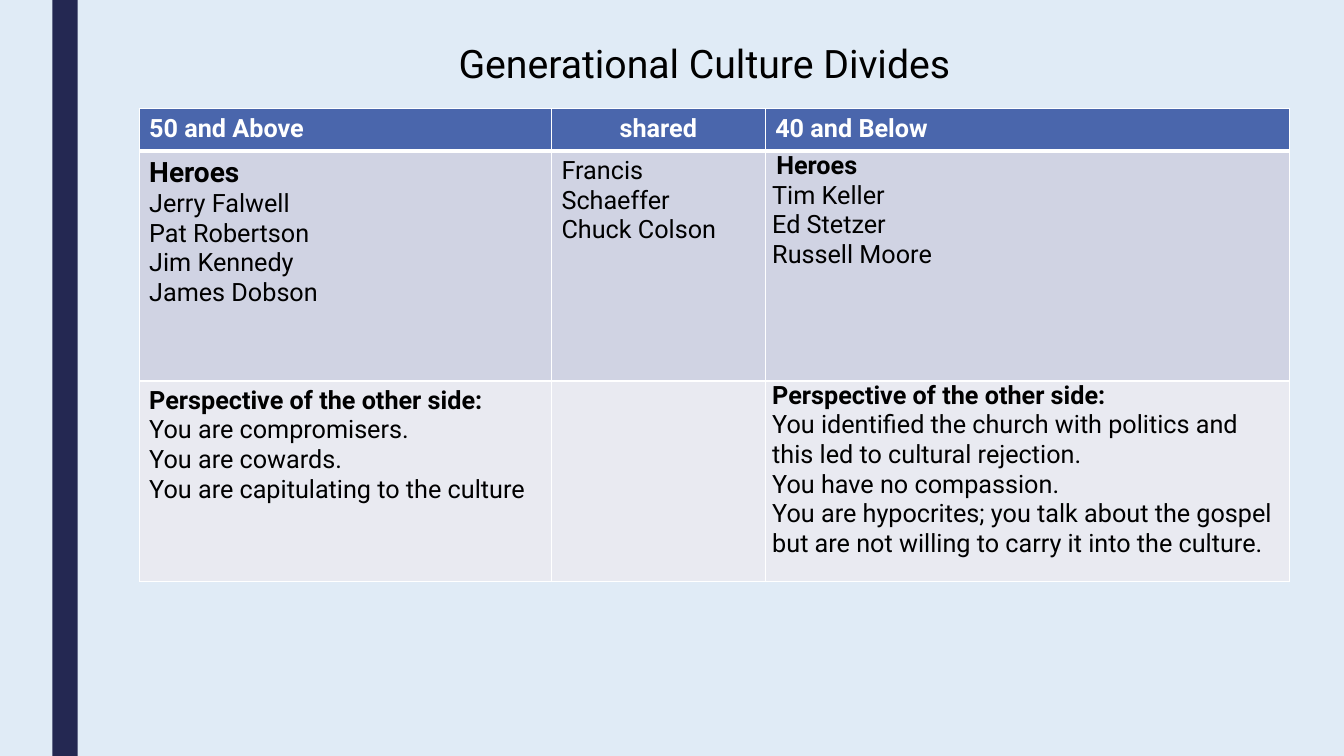
from lxml.etree import SubElement
from pptx import Presentation
from pptx.dml.color import RGBColor
from pptx.enum.shapes import MSO_SHAPE
from pptx.enum.text import MSO_ANCHOR, PP_ALIGN
from pptx.oxml.ns import qn
from pptx.util import Inches, Pt

FONT = "Roboto"
TITLE = "Generational Culture Divides"
ROWS = [
    [["50 and Above"], ["shared"], ["40 and Below"]],
    [
        ["Heroes", "Jerry Falwell", "Pat Robertson", "Jim Kennedy", "James Dobson"],
        ["Francis Schaeffer", "Chuck Colson"],
        ["Heroes", "Tim Keller", "Ed Stetzer", "Russell Moore"],
    ],
    [
        [
            "Perspective of the other side:",
            "You are compromisers.",
            "You are cowards.",
            "You are capitulating to the culture",
        ],
        [],
        [
            "Perspective of the other side:",
            "You identified the church with politics and this led to cultural rejection.",
            "You have no compassion.",
            "You are hypocrites; you talk about the gospel but are not willing "
            "to carry it into the culture.",
        ],
    ],
]
HEADINGS = {"Heroes", "Perspective of the other side:"}
COLUMN_WIDTHS = [4.09, 2.12, 5.2]
ROW_HEIGHTS = [0.42, 2.28, 1.99]
ROW_FILLS = ["4A66AC", "D0D3E3", "E9EAF1"]


def color(value):
    return RGBColor.from_string(value)


def paint(fill, value):
    fill.solid()
    fill.fore_color.rgb = color(value)


def style(font, size, value, bold=False):
    font.name = FONT
    font.size = Pt(size)
    font.bold = bold
    font.color.rgb = color(value)


def add_borders(cell, widths):
    properties = cell._tc.get_or_add_tcPr()
    for side, width in widths.items():
        line = SubElement(properties, qn(f"a:ln{side}"), w=str(Pt(width)))
        SubElement(SubElement(line, qn("a:solidFill")), qn("a:srgbClr"), val="FFFFFF")


def fill_cell(cell, lines, row, column):
    top = 3 if row == 1 else 1
    bottom = 3 if row == 0 else 1
    add_borders(cell, {"L": 1, "R": 1, "T": top, "B": bottom})
    paint(cell.fill, ROW_FILLS[row])
    if row > 0 and column == 2:
        cell.margin_left = cell.margin_right = Inches(0.07)
        cell.margin_top = cell.margin_bottom = 0
    cell.text_frame.text = "\n".join(lines)
    for para, line in zip(cell.text_frame.paragraphs, lines):
        if row == 0 and column == 1:
            para.alignment = PP_ALIGN.CENTER
        if line == "Heroes" and column == 2:
            para._p.get_or_add_pPr().set("marL", str(Inches(0.04)))
        size = 20 if line == "Heroes" and column == 0 else 18
        for span in para.runs:
            style(span.font, size, "000000" if row else "FFFFFF", row == 0 or line in HEADINGS)


deck = Presentation()
deck.slide_width, deck.slide_height = Inches(13.33), Inches(7.5)
page = deck.slides.add_slide(deck.slide_layouts[5])
paint(page.background.fill, "E0EBF6")

stripe = page.shapes.add_shape(MSO_SHAPE.RECTANGLE, Inches(0.52), 0, Inches(0.25), Inches(7.5))
stripe.shadow.inherit = False
paint(stripe.fill, "242852")
stripe.line.fill.background()

title = page.shapes.title
title.left, title.top, title.width, title.height = map(Inches, (4.24, 0.34, 5.49, 0.57))
title.text_frame.text = TITLE
title.text_frame.vertical_anchor = MSO_ANCHOR.MIDDLE
title_para = title.text_frame.paragraphs[0]
title_para.alignment = PP_ALIGN.CENTER
style(title_para.runs[0].font, 28, "000000")

table = page.shapes.add_table(
    len(ROWS), len(COLUMN_WIDTHS), Inches(1.38), Inches(1.08),
    Inches(sum(COLUMN_WIDTHS)), Inches(sum(ROW_HEIGHTS)),
).table
for column, width in zip(table.columns, COLUMN_WIDTHS):
    column.width = Inches(width)
for row, height in zip(table.rows, ROW_HEIGHTS):
    row.height = Inches(height)
for row_index, cells in enumerate(ROWS):
    for column_index, lines in enumerate(cells):
        fill_cell(table.cell(row_index, column_index), lines, row_index, column_index)

deck.save("out.pptx")
